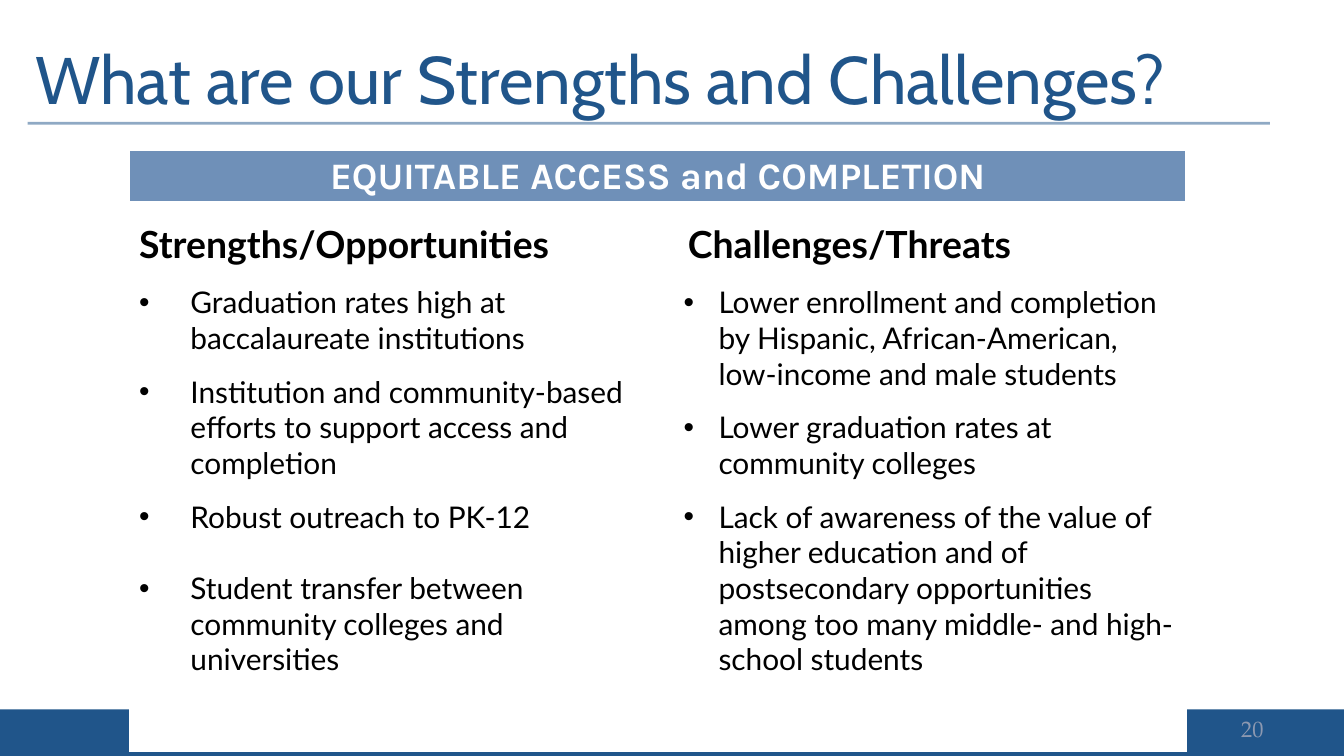
from lxml import etree
from pptx import Presentation
from pptx.dml.color import RGBColor
from pptx.enum.shapes import MSO_CONNECTOR, MSO_SHAPE
from pptx.enum.text import MSO_ANCHOR, MSO_AUTO_SIZE, PP_ALIGN
from pptx.oxml.ns import qn
from pptx.util import Cm, Pt

RECTANGLE = MSO_SHAPE.RECTANGLE
STRAIGHT = MSO_CONNECTOR.STRAIGHT
MIDDLE, TOP = MSO_ANCHOR.MIDDLE, MSO_ANCHOR.TOP
LEFT, CENTER, RIGHT = PP_ALIGN.LEFT, PP_ALIGN.CENTER, PP_ALIGN.RIGHT
NO_AUTOFIT = MSO_AUTO_SIZE.NONE

COLORS = {"navy": "20558A", "band": "6F90B8", "white": "FFFFFF", "black": "000000", "number": "8D99B1"}
TITLE = "What are our Strengths and Challenges?"
BANNER = "EQUITABLE ACCESS and COMPLETION"
SLIDE_NUMBER = "20"
GAP, WIDE_GAP = 9.6, 19.2
COLUMNS = [
    {
        "heading": "Strengths/Opportunities",
        "heading_indent": 0,
        "indent": (0.97, -0.97),
        "bullets": [
            ("Graduation rates high at baccalaureate institutions", GAP),
            ("Institution and community-based efforts to support access and completion", GAP),
            ("Robust outreach to PK-12", GAP),
            ("Student transfer between community colleges and universities", WIDE_GAP),
        ],
    },
    {
        "heading": "Challenges/Threats",
        "heading_indent": 0.69,
        "indent": (1.27, -0.66),
        "bullets": [
            ("Lower enrollment and completion by Hispanic, African-American, low-income and male students", GAP),
            ("Lower graduation rates at community colleges", GAP),
            ("Lack of awareness of the value of higher education and of postsecondary opportunities "
             "among too many middle- and high-school students", GAP),
        ],
    },
]
FORMATS = {
    "title": {"name": "Cabin", "size": Pt(36), "bold": False, "color": "navy"},
    "banner": {"name": "Karla", "size": Pt(20), "bold": True, "color": "white"},
    "heading": {"name": "Lato", "size": Pt(20), "bold": True, "color": "black"},
    "bullet": {"name": "Lato", "size": Pt(16), "bold": False, "color": "black"},
    "number": {"name": "TeX Gyre Pagella", "size": Pt(12), "bold": False, "color": "number"},
}
COLUMN_WIDTHS = (9.68, 10.29)
ROW_HEIGHTS = (1.02, 10.34)


def color(name):
    return RGBColor.from_string(COLORS[name])


def write(paragraph, text, style, alignment=LEFT):
    paragraph.alignment = alignment
    run = paragraph.add_run()
    run.text = text
    for attribute, value in FORMATS[style].items():
        if attribute == "color":
            run.font.color.rgb = color(value)
        else:
            setattr(run.font, attribute, value)


def indent(paragraph, left, first=0, bullet=None):
    properties = paragraph._p.get_or_add_pPr()
    properties.set("marL", str(Cm(left)))
    properties.set("indent", str(Cm(first)))
    if bullet:
        etree.SubElement(properties, qn("a:buFont")).set("typeface", "Arial")
        etree.SubElement(properties, qn("a:buChar")).set("char", bullet)


def format_cell(cell, fill, anchor, top=0, bottom_width=1):
    values = {"margin_left": Cm(0.18), "margin_right": Cm(0.18), "margin_top": Cm(top),
              "margin_bottom": 0, "vertical_anchor": anchor}
    for attribute, value in values.items():
        setattr(cell, attribute, value)
    cell.fill.solid()
    cell.fill.fore_color.rgb = color(fill)
    properties = cell._tc.get_or_add_tcPr()
    for position, side in enumerate("LRTB"):
        border = etree.Element(qn(f"a:ln{side}"), w=str(Pt(bottom_width if side == "B" else 1)))
        border_fill = etree.SubElement(border, qn("a:solidFill"))
        etree.SubElement(border_fill, qn("a:srgbClr")).set("val", COLORS["white"])
        properties.insert(position, border)


def add_footer_bar(slide):
    bar = slide.shapes.add_shape(RECTANGLE, Cm(-0.03), Cm(13.41), Cm(25.43), Cm(0.89))
    bar.shadow.inherit = False
    bar.fill.solid()
    bar.fill.fore_color.rgb = color("navy")
    bar.line.fill.background()


def add_title_rule(slide):
    rule = slide.shapes.add_connector(STRAIGHT, Cm(0.52), Cm(2.33), Cm(24), Cm(2.33))
    rule.line.color.rgb = color("navy")
    rule.line.width = Pt(1.5)
    properties = rule._element.spPr
    rule_color = next(properties.iter(qn("a:srgbClr")))
    etree.SubElement(rule_color, qn("a:alpha")).set("val", "50000")
    etree.SubElement(properties, qn("a:effectLst"))


def add_slide_number(slide):
    box = slide.shapes.add_textbox(Cm(18.21), Cm(13.39), Cm(5.92), Cm(0.76))
    box.text_frame.word_wrap = True
    box.text_frame.vertical_anchor = MIDDLE
    write(box.text_frame.paragraphs[0], SLIDE_NUMBER, "number", RIGHT)


def add_comparison(slide):
    table = slide.shapes.add_table(2, len(COLUMNS), Cm(2.45), Cm(2.83),
                                   Cm(sum(COLUMN_WIDTHS)), Cm(sum(ROW_HEIGHTS))).table
    table.first_row = table.horz_banding = False
    for column, width in zip(table.columns, COLUMN_WIDTHS):
        column.width = Cm(width)
    for row, height in zip(table.rows, ROW_HEIGHTS):
        row.height = Cm(height)
    banner = table.cell(0, 0)
    banner.merge(table.cell(0, len(COLUMNS) - 1))
    for cell in table.rows[0].cells:
        format_cell(cell, "band", MIDDLE, bottom_width=3)
    write(banner.text_frame.paragraphs[0], BANNER, "banner", CENTER)
    for cell, content in zip(table.rows[1].cells, COLUMNS):
        format_cell(cell, "white", TOP, top=0.34)
        heading = cell.text_frame.paragraphs[0]
        indent(heading, content["heading_indent"])
        write(heading, content["heading"], "heading")
        for text, gap in content["bullets"]:
            paragraph = cell.text_frame.add_paragraph()
            paragraph.space_before = Pt(gap)
            indent(paragraph, *content["indent"], bullet="•")
            write(paragraph, text, "bullet")


def add_title(slide):
    title = slide.shapes.title
    position = {"left": Cm(0.41), "top": Cm(0.61), "width": Cm(23.04), "height": Cm(1.7)}
    for attribute, value in position.items():
        setattr(title, attribute, value)
    frame = title.text_frame
    frame.word_wrap = True
    frame.auto_size = NO_AUTOFIT
    frame.vertical_anchor = MIDDLE
    write(frame.paragraphs[0], TITLE, "title")


def main():
    """Build the strengths and challenges slide."""
    presentation = Presentation()
    presentation.slide_width, presentation.slide_height = Cm(25.4), Cm(14.29)
    slide = presentation.slides.add_slide(presentation.slide_layouts[5])
    for build in (add_footer_bar, add_title_rule, add_slide_number, add_comparison, add_title):
        build(slide)
    presentation.save("out.pptx")


if __name__ == "__main__":
    main()
